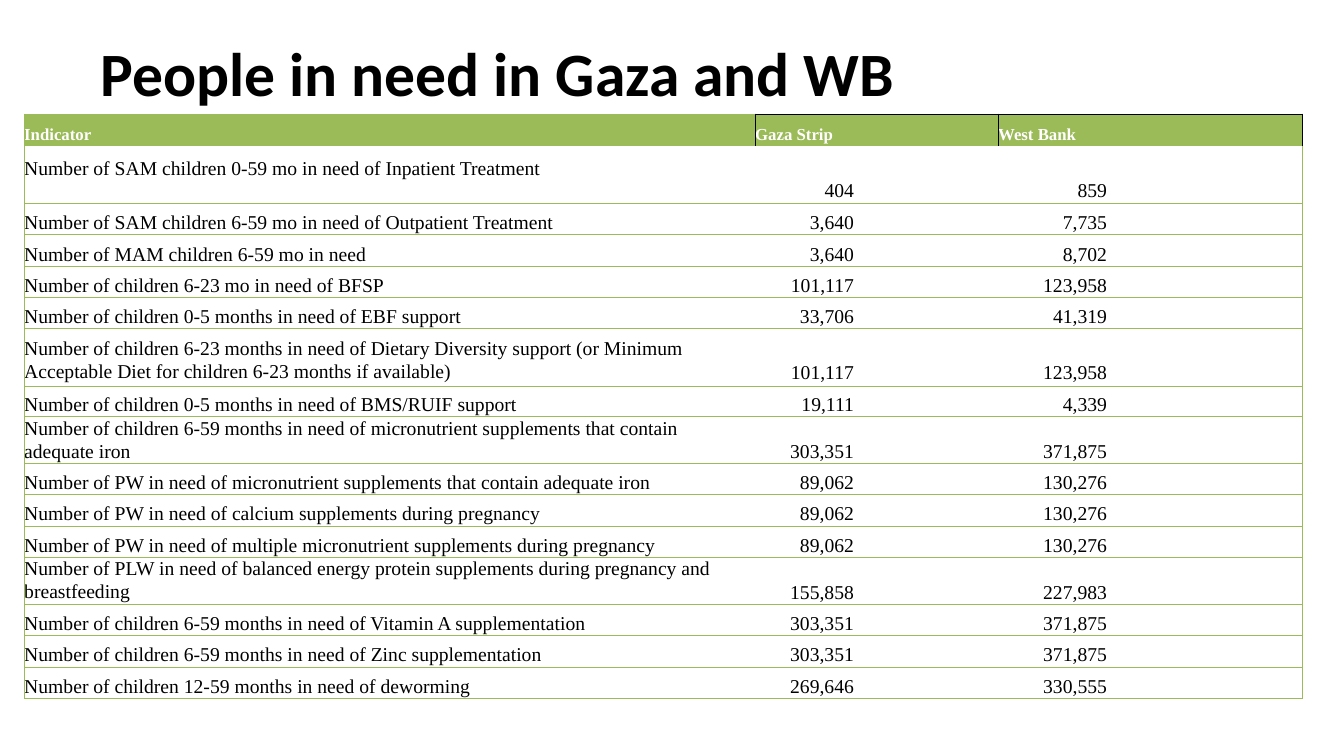
from lxml.etree import SubElement
from pptx import Presentation
from pptx.dml.color import RGBColor
from pptx.enum.text import PP_ALIGN
from pptx.oxml.ns import qn
from pptx.util import Inches, Pt

# Content
TITLE = "People in need in Gaza and WB"
HEADINGS = ("Indicator", "Gaza Strip", "West Bank")
INDICATORS = [
    ("Number of SAM children 0-59 mo in need of Inpatient Treatment", "", ""),
    ("", "404", "859"),
    ("Number of SAM children 6-59 mo in need of Outpatient Treatment", "3,640", "7,735"),
    ("Number of MAM children 6-59 mo in need", "3,640", "8,702"),
    ("Number of children 6-23 mo in need of BFSP", "101,117", "123,958"),
    ("Number of children 0-5 months in need of EBF support", "33,706", "41,319"),
    ("Number of children 6-23 months in need of Dietary Diversity support (or Minimum "
     "Acceptable Diet for children 6-23 months if available)", "101,117", "123,958"),
    ("Number of children 0-5 months in need of BMS/RUIF support", "19,111", "4,339"),
    ("Number of children 6-59 months in need of micronutrient supplements that contain "
     "adequate iron", "303,351", "371,875"),
    ("Number of PW in need of micronutrient supplements that contain adequate iron",
     "89,062", "130,276"),
    ("Number of PW in need of calcium supplements during pregnancy", "89,062", "130,276"),
    ("Number of PW in need of multiple micronutrient supplements during pregnancy",
     "89,062", "130,276"),
    ("Number of PLW in need of balanced energy protein supplements during pregnancy and\n"
     "breastfeeding", "155,858", "227,983"),
    ("Number of children 6-59 months in need of Vitamin A supplementation",
     "303,351", "371,875"),
    ("Number of children 6-59 months in need of Zinc supplementation", "303,351", "371,875"),
    ("Number of children 12-59 months in need of deworming", "269,646", "330,555"),
]

# Layout: height, label top inset, value top inset, line spacing in points
HEADER_LAYOUT = (0.32, 0.11, 0.11, 14)
USUAL_LAYOUT = (0.31, 0.08, 0.08, 16)
SPECIAL_LAYOUTS = {
    1: (0.34, 0.1, 0.1, 16.6),
    2: (0.23, 0, 0, 15.2),
    7: (0.57, 0.09, 0.33, 16),
    8: (0.3, 0.07, 0.07, 16),
    9: (0.47, 0, 0.23, 16.8),
    13: (0.47, 0, 0.23, 16.4),
}
COLUMN_WIDTHS = (7.25, 2.41, 3.02)
RIGHT_INSETS = (0.3, 1.43, 1.94)
GREEN, BLACK, WHITE = "9BBA58", "000000", "FFFFFF"


def color(hex_code):
    return RGBColor.from_string(hex_code)


def style_span(span, font, size, hex_code, bold):
    span.font.name = font
    span.font.size = Pt(size)
    span.font.bold = bold
    span.font.color.rgb = color(hex_code)


def add_border(cell, side, hex_code):
    line = SubElement(cell._tc.get_or_add_tcPr(), qn("a:ln" + side), w=str(Pt(0.5)))
    fill = SubElement(line, qn("a:solidFill"))
    SubElement(fill, qn("a:srgbClr"), val=hex_code)


def border_colors(row, column):
    """Sides in schema order, left out where no line is drawn."""
    if row == 0 and column > 0:
        return {"L": BLACK, "R": BLACK, "T": BLACK}
    sides = {}
    if column == 0:
        sides["L"] = GREEN
    if row == 0:
        sides["R"] = BLACK
    elif column == 2:
        sides["R"] = GREEN
    if row == 0 or row > 2:
        sides["T"] = GREEN
    if row > 1:
        sides["B"] = GREEN
    return sides


def fill_cell(cell, text, row, column, layout):
    height, label_top, value_top, line_points = layout
    header = row == 0
    cell.margin_left = cell.margin_bottom = 0
    cell.margin_right = 0 if header else Inches(RIGHT_INSETS[column])
    cell.margin_top = Inches(value_top if column else label_top)
    cell.text_frame.text = text
    for para in cell.text_frame.paragraphs:
        para.line_spacing = Pt(line_points)
        para.alignment = PP_ALIGN.RIGHT if column and not header else PP_ALIGN.LEFT
        for span in para.runs:
            style_span(span, "Times New Roman", 12 if header else 14,
                       WHITE if header else BLACK, header)
        if not text:
            SubElement(para._p, qn("a:endParaRPr"), sz="1000")
    for side, hex_code in border_colors(row, column).items():
        add_border(cell, side, hex_code)
    if header:
        cell.fill.solid()
        cell.fill.fore_color.rgb = color(GREEN)
    else:
        cell.fill.background()


def add_title(page):
    box = page.shapes.add_textbox(Inches(1), Inches(0.34), Inches(7.91), Inches(0.76))
    frame = box.text_frame
    frame.word_wrap = True
    frame.margin_left = frame.margin_right = frame.margin_bottom = 0
    frame.margin_top = Inches(0.01)
    frame.text = TITLE
    style_span(frame.paragraphs[0].runs[0], "Calibri", 44, BLACK, True)


def add_indicator_table(page):
    rows = [HEADINGS] + INDICATORS
    layouts = [HEADER_LAYOUT] + [SPECIAL_LAYOUTS.get(row, USUAL_LAYOUT)
                                 for row in range(1, len(rows))]
    frame = page.shapes.add_table(
        len(rows), len(HEADINGS), Inches(0.24), Inches(1.13),
        Inches(sum(COLUMN_WIDTHS)), Inches(sum(layout[0] for layout in layouts)))
    table = frame.table
    table.horz_banding = False
    # Plain style without grid lines
    table._tbl.tblPr.find(qn("a:tableStyleId")).text = "{2D5ABB26-0587-4C30-8999-92F81FD0307C}"
    for column, width in enumerate(COLUMN_WIDTHS):
        table.columns[column].width = Inches(width)
    for row, (texts, layout) in enumerate(zip(rows, layouts)):
        table.rows[row].height = Inches(layout[0])
        for column, text in enumerate(texts):
            fill_cell(table.cell(row, column), text, row, column, layout)


def main():
    deck = Presentation()
    deck.slide_width, deck.slide_height = Inches(13.33), Inches(7.5)
    page = deck.slides.add_slide(deck.slide_layouts[6])
    add_title(page)
    add_indicator_table(page)
    deck.save("out.pptx")


if __name__ == "__main__":
    main()
